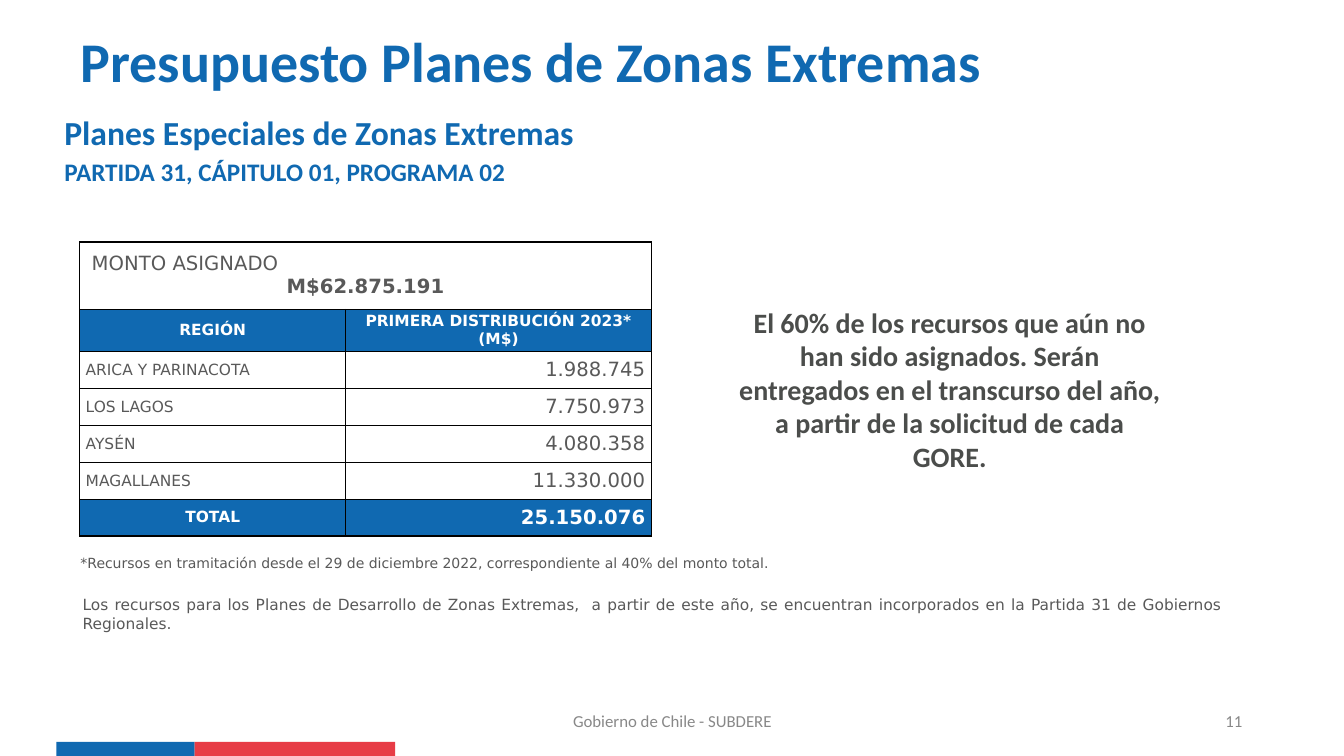
import pptx
import pptx.util
import pptx.dml.color
import pptx.enum.shapes
import pptx.enum.text
import pptx.oxml.ns
import lxml.etree

RGBColor = pptx.dml.color.RGBColor
ALIGN = pptx.enum.text.PP_ALIGN
ANCHOR = pptx.enum.text.MSO_ANCHOR

BLUE = RGBColor(0x10, 0x69, 0xB1)
RED = RGBColor(0xE7, 0x3C, 0x46)
WHITE = RGBColor(0xFF, 0xFF, 0xFF)
BLACK = RGBColor(0, 0, 0)
TEXT_GRAY = RGBColor(0x59, 0x59, 0x59)
DARK_GRAY = RGBColor(0x4B, 0x4D, 0x4B)
FOOTER_GRAY = RGBColor(0x88, 0x88, 0x88)
HEADING_FONT = "Calibri"
BODY_FONT = "DejaVu Sans"
EMU_PER_PX = 9144

TITLE = "Presupuesto Planes de Zonas Extremas"
SUBTITLE = ["Planes Especiales de Zonas Extremas", "PARTIDA 31, CÁPITULO 01, PROGRAMA 02"]
ASSIGNED = ["MONTO ASIGNADO", "M$62.875.191"]
HEADERS = [["REGIÓN"], ["PRIMERA DISTRIBUCIÓN 2023*", "(M$)"]]
REGIONS = [
    ("ARICA Y PARINACOTA", "1.988.745"),
    ("LOS LAGOS", "7.750.973"),
    ("AYSÉN", "4.080.358"),
    ("MAGALLANES", "11.330.000"),
]
TOTAL = ("TOTAL", "25.150.076")
CALLOUT = (
    "El 60% de los recursos que aún no han sido asignados. Serán entregados "
    "en el transcurso del año, a partir de la solicitud de cada GORE."
)
FOOTNOTE = (
    "*Recursos en tramitación desde el 29 de diciembre 2022, "
    "correspondiente al 40% del monto total."
)
REMARK = (
    "Los recursos para los Planes de Desarrollo de Zonas Extremas,  a partir de este año, "
    "se encuentran incorporados en la Partida 31 de Gobiernos Regionales."
)
FLAG = [((56, 736, 137, 14), BLUE), ((193, 736, 199, 14), RED)]
TEXTS = [
    ((442, 695, 450, 40), "Gobierno de Chile - SUBDERE", HEADING_FONT, 12, FOOTER_GRAY, False, ALIGN.CENTER, ANCHOR.MIDDLE),
    ((942, 695, 300, 40), "11", HEADING_FONT, 12, FOOTER_GRAY, False, ALIGN.RIGHT, ANCHOR.MIDDLE),
    ((70, 545, 1120, 27), FOOTNOTE, BODY_FONT, 10, TEXT_GRAY, False, ALIGN.JUSTIFY, ANCHOR.TOP),
    ((72, 586, 1151, 47), REMARK, BODY_FONT, 11, TEXT_GRAY, False, ALIGN.JUSTIFY, ANCHOR.TOP),
    ((723, 238, 438, 296), CALLOUT, HEADING_FONT, 20, DARK_GRAY, True, ALIGN.CENTER, ANCHOR.MIDDLE),
]
TABLE_BOX = (79, 240, 567, 292)
COLUMN_WIDTHS = [264, 303]
ASSIGNED_HEIGHT, HEADER_HEIGHT = 67, 42


def px(length):
    return pptx.util.Emu(round(length * EMU_PER_PX))


def place(box):
    return [px(length) for length in box]


def format_paragraph(paragraph, font, size, color, bold, align):
    paragraph.alignment = align
    for run in paragraph.runs:
        run.font.name = font
        run.font.size = pptx.util.Pt(size)
        run.font.bold = bold
        run.font.color.rgb = color


def add_text(slide, box, text, font, size, color, bold, align, anchor):
    frame = slide.shapes.add_textbox(*place(box)).text_frame
    frame.word_wrap = True
    frame.vertical_anchor = anchor
    frame.text = text
    for paragraph in frame.paragraphs:
        format_paragraph(paragraph, font, size, color, bold, align)
    return frame


def add_borders(cell):
    properties = cell._tc.get_or_add_tcPr()
    for side in ("a:lnL", "a:lnR", "a:lnT", "a:lnB"):
        line = lxml.etree.SubElement(properties, pptx.oxml.ns.qn(side), w=str(pptx.util.Pt(1)))
        fill = lxml.etree.SubElement(line, pptx.oxml.ns.qn("a:solidFill"))
        lxml.etree.SubElement(fill, pptx.oxml.ns.qn("a:srgbClr"), val=str(BLACK))


def fill_cell(cell, lines, size, color, bold, align, background):
    cell.margin_left = cell.margin_right = px(6)
    cell.margin_top = cell.margin_bottom = 0
    cell.vertical_anchor = ANCHOR.MIDDLE
    cell.fill.solid()
    cell.fill.fore_color.rgb = background
    cell.text_frame.text = "\n".join(lines)
    for paragraph in cell.text_frame.paragraphs:
        format_paragraph(paragraph, BODY_FONT, size, color, bold, align)


def add_budget_table(slide):
    row_count = len(REGIONS) + 3
    table = slide.shapes.add_table(row_count, 2, *place(TABLE_BOX)).table
    region_height = (TABLE_BOX[3] - ASSIGNED_HEIGHT - HEADER_HEIGHT) / (row_count - 2)
    heights = [ASSIGNED_HEIGHT, HEADER_HEIGHT] + [region_height] * (row_count - 2)
    for row, height in zip(table.rows, heights):
        row.height = px(height)
    for column, width in zip(table.columns, COLUMN_WIDTHS):
        column.width = px(width)
    for cell in table.iter_cells():
        add_borders(cell)

    assigned = table.cell(0, 0)
    assigned.merge(table.cell(0, 1))
    fill_cell(assigned, ASSIGNED, 14, TEXT_GRAY, False, ALIGN.CENTER, WHITE)
    label, amount = assigned.text_frame.paragraphs
    label.alignment = ALIGN.LEFT
    label._p.get_or_add_pPr().set("marL", str(px(6)))
    amount.runs[0].font.bold = True

    for column, lines in enumerate(HEADERS):
        fill_cell(table.cell(1, column), lines, 11, WHITE, True, ALIGN.CENTER, BLUE)
    for row, (region, value) in enumerate(REGIONS + [TOTAL], start=2):
        is_total = row == row_count - 1
        color, background = (WHITE, BLUE) if is_total else (TEXT_GRAY, WHITE)
        region_align = ALIGN.CENTER if is_total else ALIGN.LEFT
        fill_cell(table.cell(row, 0), [region], 11, color, is_total, region_align, background)
        fill_cell(table.cell(row, 1), [value], 14, color, is_total, ALIGN.RIGHT, background)


def main():
    presentation = pptx.Presentation()
    presentation.slide_width, presentation.slide_height = px(1333), px(750)
    slide = presentation.slides.add_slide(presentation.slide_layouts[5])

    for box, color in FLAG:
        stripe = slide.shapes.add_shape(pptx.enum.shapes.MSO_SHAPE.RECTANGLE, *place(box))
        stripe.shadow.inherit = False
        stripe.fill.solid()
        stripe.fill.fore_color.rgb = color
        stripe.line.fill.background()

    title = slide.shapes.title
    title.left, title.top, title.width, title.height = place((70, 10, 1072, 107))
    title.text_frame.text = TITLE
    title.text_frame.word_wrap = True
    title.text_frame.auto_size = pptx.enum.text.MSO_AUTO_SIZE.NONE
    title.text_frame.vertical_anchor = ANCHOR.MIDDLE
    title.text_frame.paragraphs[0].line_spacing = 0.9
    format_paragraph(title.text_frame.paragraphs[0], HEADING_FONT, 40, BLUE, True, ALIGN.LEFT)

    subtitle = add_text(slide, (54, 95, 1187, 145), "\n".join(SUBTITLE),
                        HEADING_FONT, 24, BLUE, True, ALIGN.LEFT, ANCHOR.TOP)
    subtitle.margin_top = px(16)
    program = subtitle.paragraphs[1]
    program.space_before = pptx.util.Pt(3)
    program.runs[0].font.size = pptx.util.Pt(18)

    add_budget_table(slide)
    for text in TEXTS:
        add_text(slide, *text)
    presentation.save("out.pptx")


if __name__ == "__main__":
    main()
